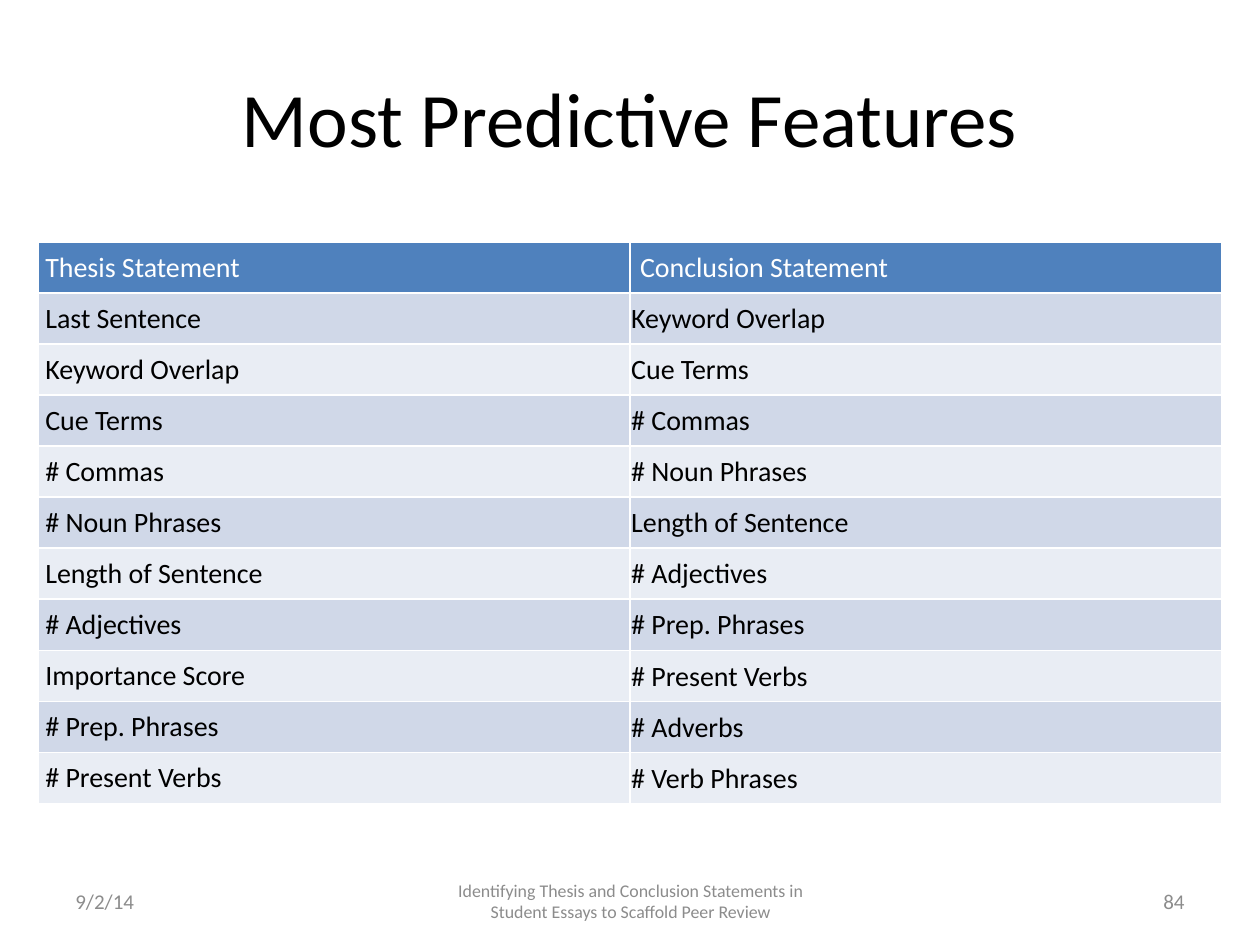
from lxml import etree
from pptx import Presentation
from pptx.dml.color import RGBColor
from pptx.enum.text import MSO_ANCHOR, PP_ALIGN
from pptx.oxml.ns import qn
from pptx.util import Inches, Pt

LEFT, CENTER, RIGHT, JUSTIFY = PP_ALIGN.LEFT, PP_ALIGN.CENTER, PP_ALIGN.RIGHT, PP_ALIGN.JUSTIFY
MIDDLE = MSO_ANCHOR.MIDDLE
WHITE, BLACK, GREY = "FFFFFF", "000000", "8C8C8C"
HEADER_FILL, BAND_FILLS = "4F81BD", ("E9EDF4", "D0D8E8")


def write(frame, text, size, color, align):
    frame.text = text
    para = frame.paragraphs[0]
    para.alignment = align
    font = para.runs[0].font
    font.name, font.size, font.bold = "Calibri", Pt(size), False
    font.color.rgb = RGBColor.from_string(color)


def add_borders(cell, color, width):
    properties = cell._tc.get_or_add_tcPr()
    for index, side in enumerate(("lnL", "lnR", "lnT", "lnB")):
        line = etree.Element(qn(f"a:{side}"), w=str(Pt(width)))
        fill = etree.SubElement(line, qn("a:solidFill"))
        etree.SubElement(fill, qn("a:srgbClr"), val=color)
        properties.insert(index, line)


deck = Presentation()
deck.slide_width, deck.slide_height = Inches(10), Inches(7.5)
page = deck.slides.add_slide(deck.slide_layouts[5])

title = page.shapes.title
title.left, title.top = Inches(0.5), Inches(0.3)
title.width, title.height = Inches(9), Inches(1.25)
title.text_frame.vertical_anchor = MIDDLE
write(title.text_frame, "Most Predictive Features", 44, BLACK, CENTER)

footers = [
    (0.5, 2.33, "9/2/14", 12, LEFT),
    (3.42, 3.17, "Identifying Thesis and Conclusion Statements in "
                 "Student Essays to Scaffold Peer Review", 10.2, CENTER),
    (7.17, 2.33, "84", 12, RIGHT),
]
for left, width, text, size, align in footers:
    box = page.shapes.add_textbox(Inches(left), Inches(6.95), Inches(width), Inches(0.4))
    box.text_frame.word_wrap = True
    box.text_frame.vertical_anchor = MIDDLE
    write(box.text_frame, text, size, GREY, align)

features = [
    ("Thesis Statement", "Conclusion Statement"),
    ("Last Sentence", "Keyword Overlap"),
    ("Keyword Overlap", "Cue Terms"),
    ("Cue Terms", "# Commas"),
    ("# Commas", "# Noun Phrases"),
    ("# Noun Phrases", "Length of Sentence"),
    ("Length of Sentence", "# Adjectives"),
    ("# Adjectives", "# Prep. Phrases"),
    ("Importance Score", "# Present Verbs"),
    ("# Prep. Phrases", "# Adverbs"),
    ("# Present Verbs", "# Verb Phrases"),
]
table = page.shapes.add_table(len(features), 2, Inches(0.3), Inches(1.92),
                              Inches(9.4), Inches(4.46)).table
for row, names in enumerate(features):
    for column, name in enumerate(names):
        cell = table.cell(row, column)
        header = row == 0
        thesis = column == 0
        margin = 0.06 if thesis else 0.08 if header else 0.01
        cell.margin_left = cell.margin_right = Inches(margin)
        cell.margin_top = Inches(0 if thesis or header else 0.01)
        cell.margin_bottom = 0
        cell.vertical_anchor = MIDDLE
        cell.fill.solid()
        cell.fill.fore_color.rgb = RGBColor.from_string(HEADER_FILL if header else BAND_FILLS[row % 2])
        add_borders(cell, WHITE, 1)
        write(cell.text_frame, name, 16, WHITE if header else BLACK,
              JUSTIFY if thesis or header else LEFT)

deck.save("out.pptx")
